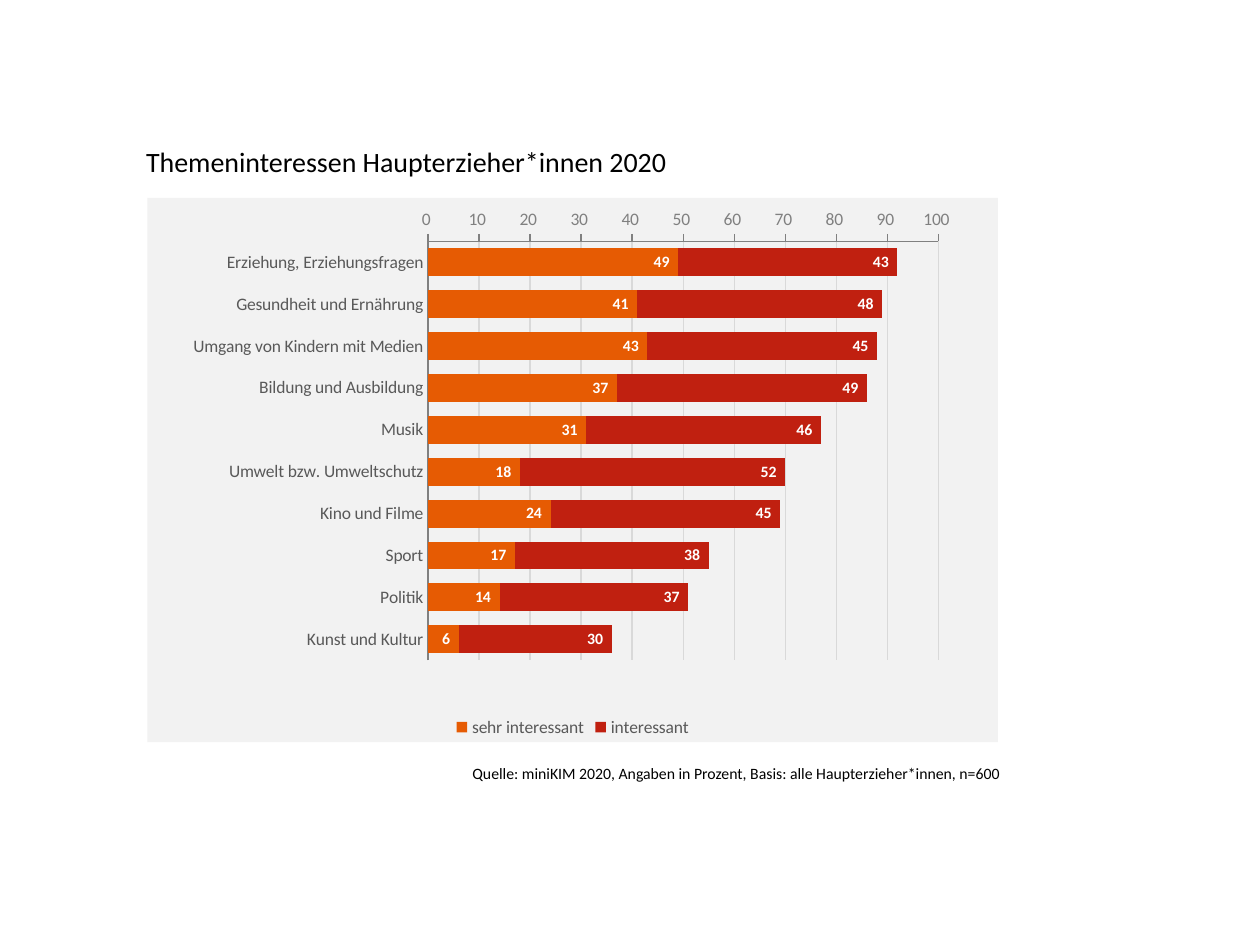
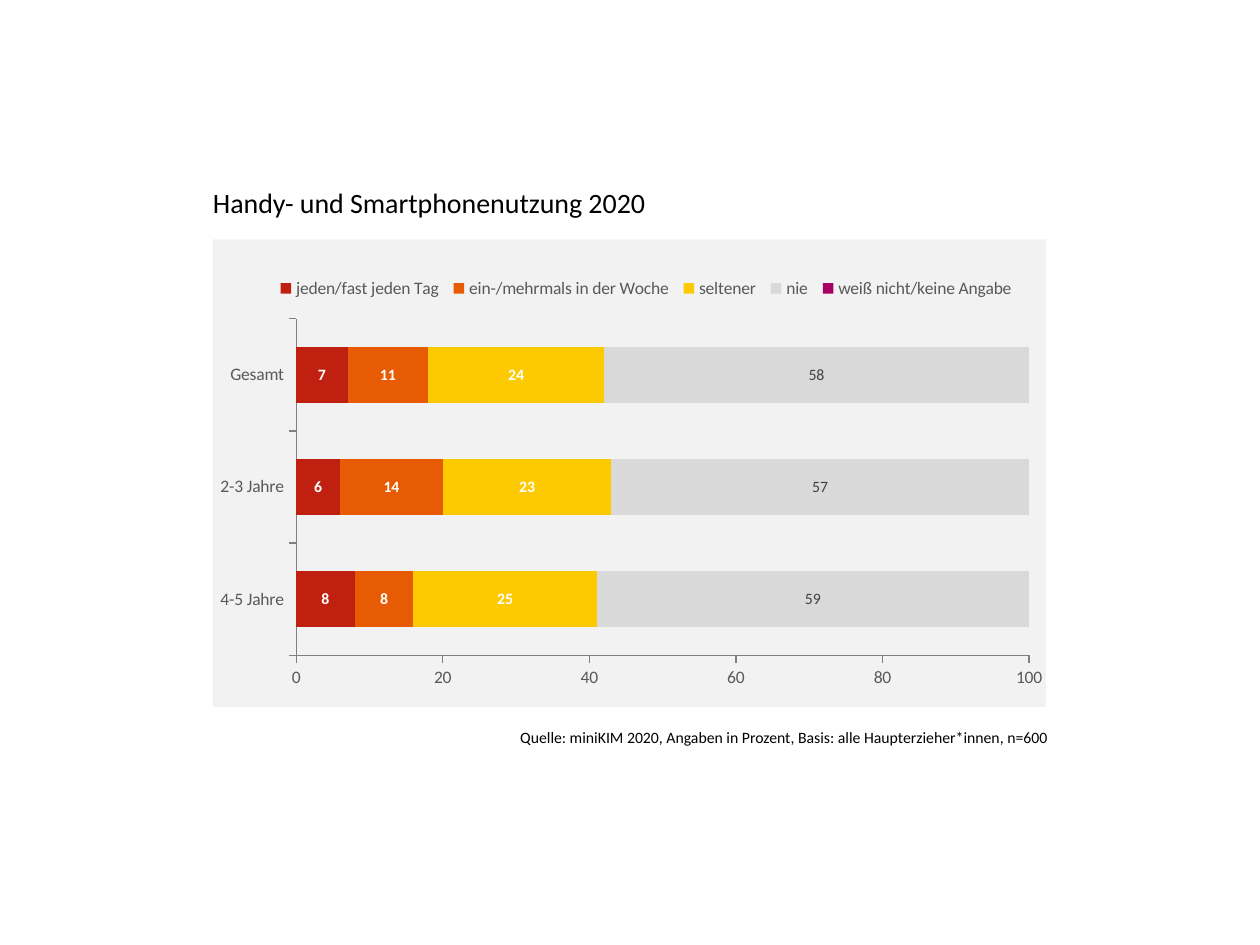
import pptx
import pptx.chart.data
import pptx.dml.color
import pptx.enum.chart
import pptx.enum.text
import pptx.oxml
import pptx.oxml.ns
import pptx.util

Inches = pptx.util.Inches
Pt = pptx.util.Pt
RGBColor = pptx.dml.color.RGBColor
Align = pptx.enum.text.PP_ALIGN
Anchor = pptx.enum.text.MSO_ANCHOR
Place = pptx.enum.chart.XL_LEGEND_POSITION
Label = pptx.enum.chart.XL_LABEL_POSITION
Tick = pptx.enum.chart.XL_TICK_MARK

BLACK = RGBColor(0x00, 0x00, 0x00)
WHITE = RGBColor(0xFF, 0xFF, 0xFF)
PANEL = RGBColor(0xF2, 0xF2, 0xF2)
SILVER = RGBColor(0xD9, 0xD9, 0xD9)
GRAY = RGBColor(0x80, 0x80, 0x80)
SLATE = RGBColor(0x59, 0x59, 0x59)
DARK = RGBColor(0x40, 0x40, 0x40)
RED = RGBColor(0xC0, 0x20, 0x10)
ORANGE = RGBColor(0xE6, 0x5B, 0x03)
YELLOW = RGBColor(0xFD, 0xC9, 0x00)
PURPLE = RGBColor(0xA6, 0x00, 0x63)

SOURCE = ("Quelle: miniKIM 2020, Angaben in Prozent, "
          "Basis: alle Haupterzieher*innen, n=600")
PADDED = r"0_ ;\-0\ "
WHOLE = "#,##0"

TOPICS = [
    ("Erziehung, Erziehungsfragen", 49, 43),
    ("Gesundheit und Ernährung", 41, 48),
    ("Umgang von Kindern mit Medien", 43, 45),
    ("Bildung und Ausbildung", 37, 49),
    ("Musik", 31, 46),
    ("Umwelt bzw. Umweltschutz", 18, 52),
    ("Kino und Filme", 24, 45),
    ("Sport", 17, 38),
    ("Politik", 14, 37),
    ("Kunst und Kultur", 6, 30),
]
USAGE = [
    ("4-5 Jahre", 8, 8, 25, 59, 0),
    ("2-3 Jahre", 6, 14, 23, 57, 0),
    ("Gesamt", 7, 11, 24, 58, 0),
]


def layout(x, y, w, h, inner=False):
    """Manual chart layout, in shares of the chart frame."""
    target = '<c:layoutTarget val="inner"/>' if inner else ""
    return pptx.oxml.parse_xml(
        f'<c:layout {pptx.oxml.ns.nsdecls("c")}><c:manualLayout>{target}'
        '<c:xMode val="edge"/><c:yMode val="edge"/>'
        f'<c:x val="{x}"/><c:y val="{y}"/><c:w val="{w}"/><c:h val="{h}"/>'
        '</c:manualLayout></c:layout>')


class Deck:
    face = "Calibri"

    def __init__(self):
        self.show = pptx.Presentation()
        self.show.slide_width = Inches(10)
        self.show.slide_height = Inches(7.5)
        self.slide = None

    def style(self, font, size, color, bold=False):
        font.name = self.face
        font.size = Pt(size)
        font.bold = bold
        font.color.rgb = color

    def label(self, shape, text, size, align, anchor):
        frame = shape.text_frame
        frame.word_wrap = True
        frame.auto_size = pptx.enum.text.MSO_AUTO_SIZE.NONE
        frame.vertical_anchor = anchor
        para = frame.paragraphs[0]
        para.alignment = align
        run = para.add_run()
        run.text = text
        self.style(run.font, size, BLACK)
        return para

    def page(self, title, left, top, width, height):
        """Start a slide with its title."""
        self.slide = self.show.slides.add_slide(self.show.slide_layouts[5])
        shape = self.slide.shapes.title
        shape.left, shape.top = Inches(left), Inches(top)
        shape.width, shape.height = Inches(width), Inches(height)
        para = self.label(shape, title, 16, Align.LEFT, Anchor.TOP)
        para.line_spacing = 0.9

    def source(self, left, top, width):
        box = self.slide.shapes.add_textbox(
            Inches(left), Inches(top), Inches(width), Inches(0.28))
        self.label(box, SOURCE, 9, Align.RIGHT, Anchor.MIDDLE)

    def bars(self, left, top, width, height, rows, parts, plot, gap, form):
        """Stacked bars; parts are (name, fill, label colour or None)."""
        data = pptx.chart.data.CategoryChartData()
        names, *columns = zip(*rows)
        data.categories = names
        for (name, _, _), column in zip(parts, columns):
            data.add_series(name, column)
        chart = self.slide.shapes.add_chart(
            pptx.enum.chart.XL_CHART_TYPE.BAR_STACKED, Inches(left),
            Inches(top), Inches(width), Inches(height), data).chart
        chart.has_title = False
        self.style(chart.font, 10, BLACK)
        self.panel(chart, plot)

        group = chart.plots[0]
        group.gap_width = gap
        group.overlap = 100
        group.vary_by_categories = False
        for series, (_, fill, color) in zip(group.series, parts):
            series.format.fill.solid()
            series.format.fill.fore_color.rgb = fill
            if color is not None:
                labels = series.data_labels
                labels.show_value = True
                labels.number_format = form
                labels.number_format_is_linked = False
                self.style(labels.font, 9, color, bold=color == WHITE)

        values = chart.value_axis
        values.minimum_scale, values.maximum_scale = 0, 100
        values.has_major_gridlines = False
        values.tick_labels.number_format = form
        values.tick_labels.number_format_is_linked = False
        for axis in (chart.category_axis, values):
            axis.major_tick_mark = Tick.OUTSIDE
            axis.minor_tick_mark = Tick.NONE
            axis.format.line.color.rgb = GRAY
            axis.format.line.width = Pt(0.75)
            self.style(axis.tick_labels.font, 10, SLATE)
        return chart

    def panel(self, chart, plot):
        """Fill the chart frame and fix the plot inside it."""
        root = chart.element
        fill = pptx.oxml.parse_xml(
            f'<c:spPr {pptx.oxml.ns.nsdecls("c", "a")}><a:solidFill>'
            f'<a:srgbClr val="{PANEL}"/></a:solidFill>'
            '<a:ln><a:noFill/></a:ln></c:spPr>')
        root.find(pptx.oxml.ns.qn("c:chart")).addnext(fill)
        area = root.find(".//" + pptx.oxml.ns.qn("c:plotArea"))
        for old in area.findall(pptx.oxml.ns.qn("c:layout")):
            area.remove(old)
        area.insert(0, layout(*plot, inner=True))

    def legend(self, chart, place, over=False, spot=None):
        chart.has_legend = True
        legend = chart.legend
        legend.position = place
        legend.include_in_layout = over
        self.style(legend.font, 10, SLATE)
        if spot:
            root = chart.element.find(".//" + pptx.oxml.ns.qn("c:legendPos"))
            root.addnext(layout(*spot))


def topics(deck):
    deck.page("Themeninteressen Haupterzieher*innen 2020",
              1.06, 1.13, 6.86, 0.5)
    deck.source(1.42, 6, 6.61)
    parts = [("sehr interessant", ORANGE, WHITE),
             ("interessant", RED, WHITE)]
    chart = deck.bars(1.17, 1.57, 6.75, 4.32, TOPICS, parts,
                      (0.33, 0.08, 0.6, 0.77), 50, PADDED)
    for series in chart.plots[0].series:
        series.data_labels.position = Label.INSIDE_END
    names, values = chart.category_axis, chart.value_axis
    names.reverse_order = True
    names.major_tick_mark = Tick.NONE
    names.crosses = pptx.enum.chart.XL_AXIS_CROSSES.MAXIMUM
    values.major_unit = 10
    values.has_major_gridlines = True
    values.major_gridlines.format.line.color.rgb = SILVER
    values.major_gridlines.format.line.width = Pt(0.75)
    values.tick_labels.font.color.rgb = GRAY
    deck.legend(chart, Place.BOTTOM, over=True)


def usage(deck):
    deck.page("Handy- und Smartphonenutzung 2020", 1.59, 1.45, 6.73, 0.37)
    parts = [("jeden/fast jeden Tag", RED, WHITE),
             ("ein-/mehrmals in der Woche", ORANGE, WHITE),
             ("seltener", YELLOW, WHITE),
             ("nie", SILVER, DARK),
             ("weiß nicht/keine Angabe", PURPLE, None)]
    chart = deck.bars(1.69, 1.9, 6.61, 3.71, USAGE, parts,
                      (0.1, 0.17, 0.88, 0.72), 100, WHOLE)
    chart.value_axis.major_unit = 20
    deck.legend(chart, Place.TOP, spot=(0.07, 0.07, 0.9, 0.07))
    deck.source(1.98, 5.71, 6.43)


def main():
    deck = Deck()
    topics(deck)
    usage(deck)
    deck.show.save("out.pptx")


if __name__ == "__main__":
    main()
